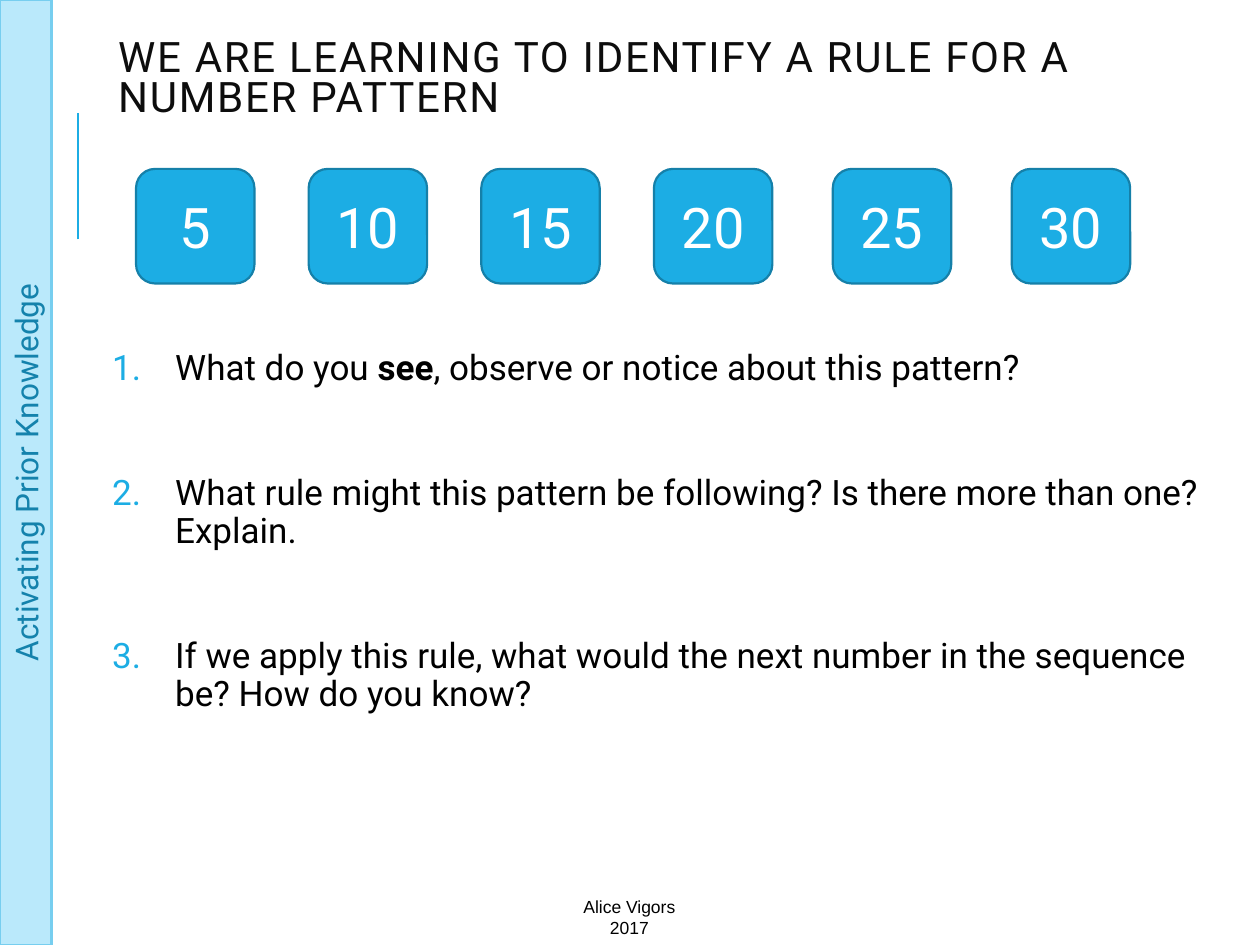
import pptx
import pptx.dml.color
import pptx.enum.shapes
import pptx.enum.text
import pptx.oxml
import pptx.oxml.ns
import pptx.util

RGBColor = pptx.dml.color.RGBColor
Shape = pptx.enum.shapes.MSO_SHAPE
Align = pptx.enum.text.PP_ALIGN
Anchor = pptx.enum.text.MSO_ANCHOR

BLUE = RGBColor(0x1C, 0xAD, 0xE4)
BLUE_EDGE = RGBColor(0x15, 0x80, 0xA9)
PALE = RGBColor(0xBA, 0xE9, 0xFB)
PALE_EDGE = RGBColor(0x77, 0xCE, 0xEF)
SIDE_TEXT = RGBColor(0x14, 0x82, 0xAC)
TITLE_TEXT = RGBColor(0x0D, 0x0D, 0x0D)
BLACK = RGBColor(0, 0, 0)
WHITE = RGBColor(0xFF, 0xFF, 0xFF)

COLUMNS, ROWS = 100, 75


class LessonSlide:
    """Places elements on a grid of 100 columns by 75 rows."""

    font = "Roboto"

    def __init__(self, deck):
        self.slide = deck.slides.add_slide(deck.slide_layouts[6])
        self.column = deck.slide_width / COLUMNS
        self.row = deck.slide_height / ROWS

    def place(self, left, top, width, height):
        return (round(left * self.column), round(top * self.row),
                round(width * self.column), round(height * self.row))

    def style(self, para, size, color, font=None, align=Align.LEFT):
        para.alignment = align
        for span in para.runs:
            span.font.name = font or self.font
            span.font.size = pptx.util.Pt(size)
            span.font.color.rgb = color

    def line(self, left, top, right, bottom, color, width):
        x1, y1, x2, y2 = self.place(left, top, right, bottom)
        line = self.slide.shapes.add_connector(
            pptx.enum.shapes.MSO_CONNECTOR.STRAIGHT, x1, y1, x2, y2)
        line.line.color.rgb = color
        line.line.width = pptx.util.Pt(width)
        pptx.oxml.ns.qn("a:effectLst")
        line._element.spPr.append(
            pptx.oxml.xmlchemy.OxmlElement("a:effectLst"))

    def block(self, kind, area, text, size, fill, edge, color):
        box = self.slide.shapes.add_shape(kind, *self.place(*area))
        box.shadow.inherit = False
        box.fill.solid()
        box.fill.fore_color.rgb = fill
        box.line.color.rgb = edge
        box.line.width = pptx.util.Pt(1.25)
        box.text_frame.text = text
        box.text_frame.vertical_anchor = Anchor.MIDDLE
        self.style(box.text_frame.paragraphs[0], size, color, align=Align.CENTER)
        return box

    def text(self, area, text, size, color, font=None, align=Align.LEFT):
        box = self.slide.shapes.add_textbox(*self.place(*area))
        box.text_frame.word_wrap = True
        box.text_frame.text = text
        for para in box.text_frame.paragraphs:
            self.style(para, size, color, font, align)
        return box

    def title(self, area, text):
        frame = self.text(area, text, 24, TITLE_TEXT).text_frame
        frame.vertical_anchor = Anchor.MIDDLE
        frame.margin_bottom = pptx.util.Inches(0.36)
        para = frame.paragraphs[0]
        para.line_spacing = 0.8
        para.runs[0].font._element.set("spc", "100")

    def questions(self, area, items, gap):
        """Numbered list; each item is a list of (text, bold) spans."""
        frame = self.text(area, "", 20, BLACK).text_frame
        frame.margin_left = frame.margin_right = pptx.util.Inches(0.05)
        for index, spans in enumerate(items):
            para = frame.add_paragraph() if index else frame.paragraphs[0]
            for words, bold in spans:
                span = para.add_run()
                span.text = words
                span.font.bold = bold
            self.style(para, 20, BLACK)
            para.line_spacing = 0.9
            para.space_before = pptx.util.Pt(gap if index else 12)
            para.space_after = pptx.util.Pt(2)
            self.number(para, BLUE)

    def number(self, para, color):
        props = para._p.get_or_add_pPr()
        indent = pptx.util.Inches(0.5)
        props.set("marL", str(indent))
        props.set("indent", str(-indent))
        namespace = pptx.oxml.ns.nsdecls("a")
        for xml in (f'<a:buClr {namespace}><a:srgbClr val="{color}"/></a:buClr>',
                    f'<a:buFont {namespace} typeface="+mj-lt"/>',
                    f'<a:buAutoNum {namespace} type="arabicPeriod"/>'):
            props.append(pptx.oxml.parse_xml(xml))


def main():
    deck = pptx.Presentation()
    deck.slide_width = pptx.util.Inches(10)
    deck.slide_height = pptx.util.Inches(7.5)
    page = LessonSlide(deck)

    # Accent line and title
    page.line(6.2, 19, 6.2, 9, BLUE, 1.5)
    page.title((8.4, 4, 87.7, 7.9),
               "WE ARE LEARNING TO IDENTIFY A RULE FOR A NUMBER PATTERN")

    # Questions about the pattern
    page.questions((8.4, 27.3, 88.5, 32.2), [
        [("What do you ", False), ("see", True),
         (", observe or notice about this pattern?", False)],
        [("What rule might this pattern be following? "
          "Is there more than one? Explain.", False)],
        [("If we apply this rule, what would the next number "
          "in the sequence be? How do you know?", False)],
    ], gap=48)

    # Number tiles: the steps after the fourth tile are slightly wider
    for index in range(6):
        left = 10.8 + 13.7 * index + 0.5 * max(0, index - 3)
        page.block(Shape.ROUNDED_RECTANGLE, (left, 13.4, 9.4, 9.1),
                   str(5 * (index + 1)), 32, BLUE, BLUE_EDGE, WHITE)

    # Side banner, read upwards
    banner = page.block(Shape.RECTANGLE, (0, 0, 4.1, ROWS),
                        "Activating Prior Knowledge", 18,
                        PALE, PALE_EDGE, SIDE_TEXT)
    banner.text_frame._txBody.bodyPr.set("vert", "vert270")

    # Footer
    page.text((44.6, 70.6, 10.7, 4.4), "Alice Vigors 2017", 10, BLACK,
              font="Arial", align=Align.CENTER)

    deck.save("out.pptx")


if __name__ == "__main__":
    main()
